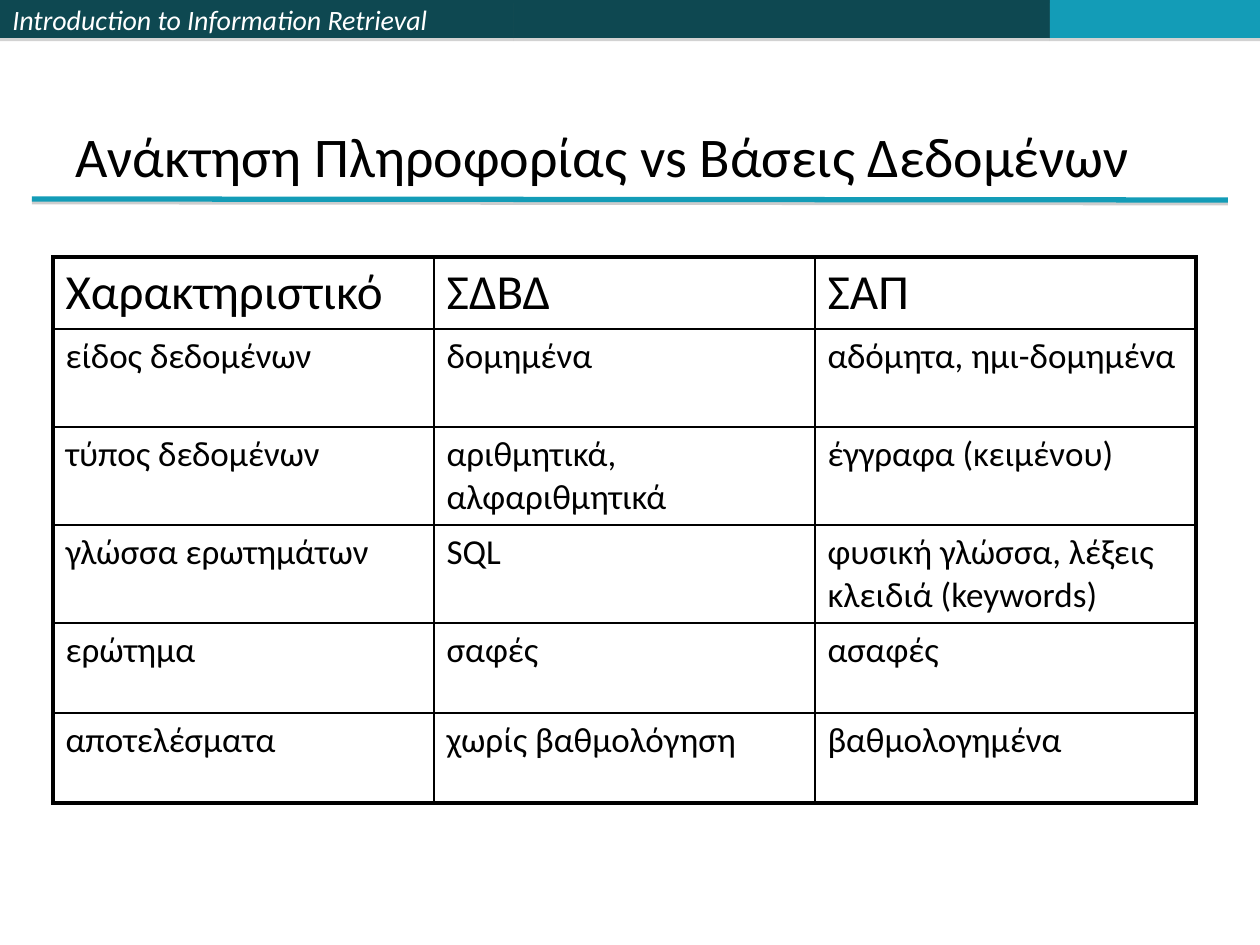
from lxml import etree
from pptx import Presentation
from pptx.dml.color import RGBColor
from pptx.enum.shapes import MSO_CONNECTOR, MSO_SHAPE
from pptx.enum.text import MSO_ANCHOR, PP_ALIGN
from pptx.oxml.ns import qn
from pptx.util import Pt

RECTANGLE = MSO_SHAPE.RECTANGLE
STRAIGHT = MSO_CONNECTOR.STRAIGHT
MIDDLE, BOTTOM = MSO_ANCHOR.MIDDLE, MSO_ANCHOR.BOTTOM
LEFT = PP_ALIGN.LEFT

PX = 914400 // 126
FONT = "Calibri"
BLACK = RGBColor(0x00, 0x00, 0x00)
WHITE = RGBColor(0xFF, 0xFF, 0xFF)
DARK_TEAL = RGBColor(0x0E, 0x48, 0x51)
TEAL = RGBColor(0x13, 0x9C, 0xB7)
SHADOW_GREY = RGBColor(0x80, 0x80, 0x80)

THIN, THICK = Pt(1), Pt(2.25)
ROW_HEIGHTS = [72, 98, 98, 98, 90, 90]
ROWS = [
    ["Χαρακτηριστικό", "ΣΔΒΔ", "ΣΑΠ"],
    ["είδος δεδομένων", "δομημένα", "αδόμητα, ημι-δομημένα"],
    ["τύπος δεδομένων", "αριθμητικά, αλφαριθμητικά", "έγγραφα (κειμένου)"],
    ["γλώσσα ερωτημάτων", "SQL", "φυσική γλώσσα, λέξεις κλειδιά (keywords)"],
    ["ερώτημα", "σαφές", "ασαφές"],
    ["αποτελέσματα", "χωρίς βαθμολόγηση", "βαθμολογημένα"],
]


def px(*lengths):
    return [length * PX for length in lengths]


def write(text_frame, text, size, color, italic=False):
    text_frame.text = text
    para = text_frame.paragraphs[0]
    para.alignment = LEFT
    font = para.runs[0].font
    font.name, font.size, font.italic = FONT, Pt(size), italic
    font.color.rgb = color
    return para


def space_before(para, percent):
    spacing = etree.SubElement(para._p.get_or_add_pPr(), qn("a:spcBef"))
    etree.SubElement(spacing, qn("a:spcPct"), val=str(percent * 1000))


def add_color(parent, color):
    fill = etree.SubElement(parent, qn("a:solidFill"))
    etree.SubElement(fill, qn("a:srgbClr"), val=str(color))


def drop_shadow(properties, distance, opacity):
    effects = etree.SubElement(properties, qn("a:effectLst"))
    shadow = etree.SubElement(effects, qn("a:outerShdw"), blurRad="0",
                              dist=str(int(Pt(distance))), dir="5400000",
                              rotWithShape="0")
    color = etree.SubElement(shadow, qn("a:srgbClr"), val=str(SHADOW_GREY))
    etree.SubElement(color, qn("a:alpha"), val=str(opacity * 1000))


def add_header(page, left, top, height):
    bands = [(514, DARK_TEAL, "Introduction to Information Retrieval"),
             (536, DARK_TEAL, ""), (210, TEAL, "")]
    for width, color, text in bands:
        band = page.shapes.add_shape(RECTANGLE, *px(left, top, width, height))
        band.fill.solid()
        band.fill.fore_color.rgb = color
        band.line.fill.background()
        drop_shadow(band.element.spPr, 1.8, 35)
        if text:
            band.text_frame.vertical_anchor = MIDDLE
            write(band.text_frame, text, 16, WHITE, italic=True)
        left += width


def add_title(page, left, top, width, height):
    # Rule under the title, wider than the text
    rule_y = top + height + 4
    rule = page.shapes.add_connector(
        STRAIGHT, *px(left - 31, rule_y, left + width + 31, rule_y + 1))
    rule.line.color.rgb = TEAL
    rule.line.width = Pt(3)
    drop_shadow(rule._element.spPr, 1.6, 38)

    box = page.shapes.add_textbox(*px(left, top, width, height))
    box.text_frame.word_wrap = True
    box.text_frame.vertical_anchor = BOTTOM
    write(box.text_frame, "Ανάκτηση Πληροφορίας vs Βάσεις Δεδομένων", 32, BLACK)


def set_borders(cell, **widths):
    properties = cell._tc.get_or_add_tcPr()
    for position, side in enumerate("LRTB"):
        line = etree.Element(qn("a:ln" + side), w=str(int(widths[side])))
        add_color(line, BLACK)
        properties.insert(position, line)


def add_comparison(page, left, top, width):
    columns = len(ROWS[0])
    frame = page.shapes.add_table(len(ROWS), columns,
                                  *px(left, top, width, sum(ROW_HEIGHTS)))
    table = frame.table
    table.first_row = table.horz_banding = False
    for column in table.columns:
        column.width = width * PX // columns
    for row, height in zip(table.rows, ROW_HEIGHTS):
        row.height = height * PX

    last_row, last_column = len(ROWS) - 1, columns - 1
    for r, texts in enumerate(ROWS):
        for c, text in enumerate(texts):
            cell = table.cell(r, c)
            cell.fill.background()
            para = write(cell.text_frame, text, 20 if r else 28, BLACK)
            space_before(para, 20)
            # Thick frame outside, thin grid inside
            set_borders(cell,
                        L=THIN if c else THICK,
                        R=THICK if c == last_column else THIN,
                        T=THIN if r else THICK,
                        B=THICK if r == last_row else THIN)


def main():
    deck = Presentation()
    deck.slide_width, deck.slide_height = px(1260, 945)
    page = deck.slides.add_slide(deck.slide_layouts[6])
    add_header(page, 0, 0, 38)
    add_title(page, 63, 38, 1134, 157)
    add_comparison(page, 53, 257, 1143)
    deck.save("out.pptx")


if __name__ == "__main__":
    main()
